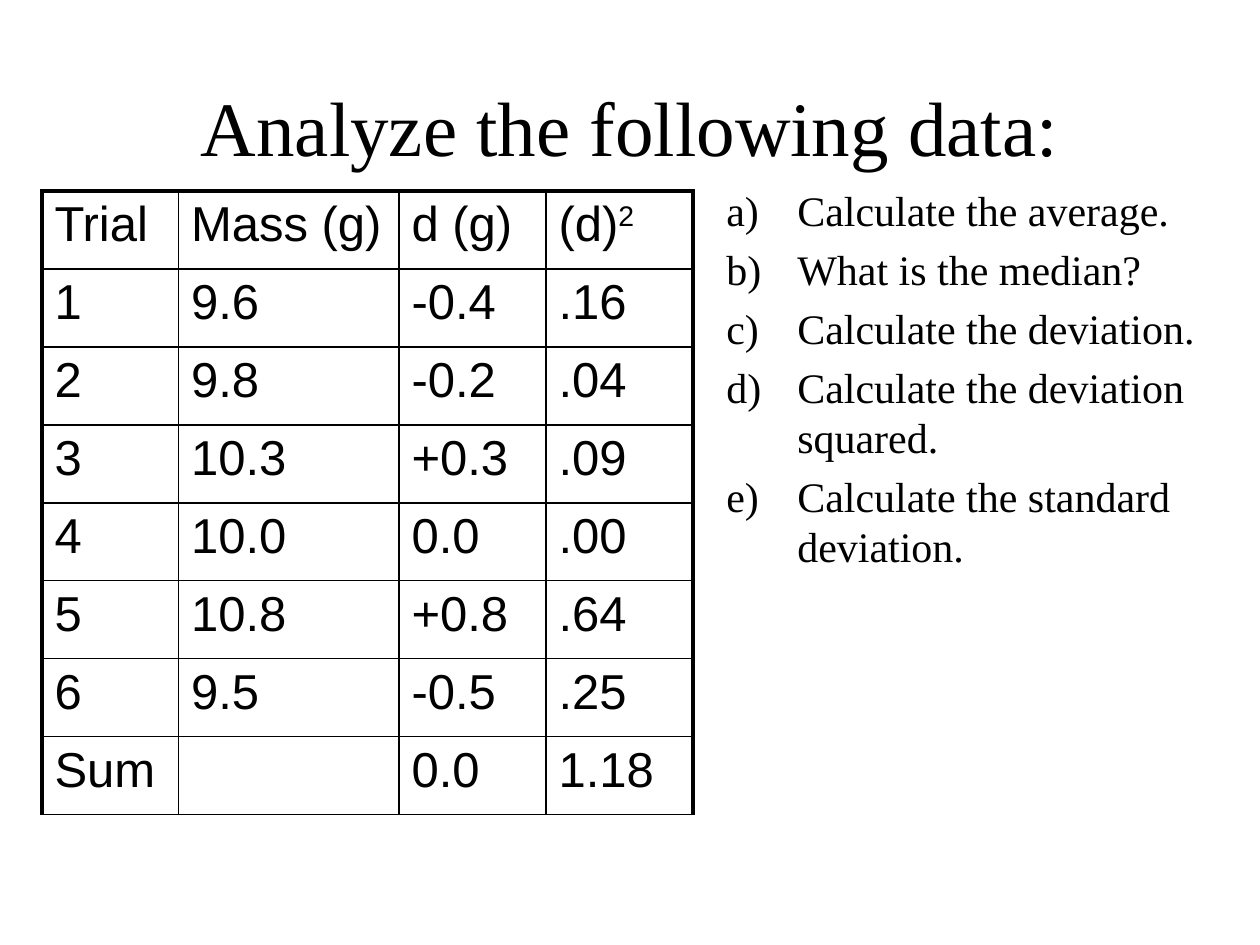
from lxml import etree
from pptx import Presentation
from pptx.dml.color import RGBColor
from pptx.enum.text import MSO_ANCHOR, PP_ALIGN
from pptx.oxml.ns import qn
from pptx.util import Pt

CENTER, LEFT = PP_ALIGN.CENTER, PP_ALIGN.LEFT
MIDDLE, TOP = MSO_ANCHOR.MIDDLE, MSO_ANCHOR.TOP
INK = "000000"
SERIF, SANS = "Times New Roman", "Arial"

# Content; "^" starts a superscript
TITLE = "Analyze the following data:"
ROWS = [
    ("Trial", "Mass (g)", "d (g)", "(d)^2"),
    ("1", "9.6", "-0.4", ".16"),
    ("2", "9.8", "-0.2", ".04"),
    ("3", "10.3", "+0.3", ".09"),
    ("4", "10.0", "0.0", ".00"),
    ("5", "10.8", "+0.8", ".64"),
    ("6", "9.5", "-0.5", ".25"),
    ("Sum", "", "0.0", "1.18"),
]
TASKS = [
    "Calculate the average.",
    "What is the median?",
    "Calculate the deviation.",
    "Calculate the deviation squared.",
    "Calculate the standard deviation.",
]
WIDTHS = (78, 126, 84, 84)
ROW_H = 44.55
THICK, THIN = 2.25, 1


def color(code):
    return RGBColor.from_string(code)


def style(font, size, face):
    font.size, font.name = Pt(size), face
    font.color.rgb = color(INK)


def write(frame, lines, size=24, face=SERIF, align=LEFT, anchor=TOP,
          before=0, hang=0):
    """Fill a text frame; a hang indent also letters the lines a), b), ..."""
    frame.word_wrap = True
    frame.vertical_anchor = anchor
    for i, line in enumerate(lines):
        para = frame.add_paragraph() if i else frame.paragraphs[0]
        para.alignment, para.space_before = align, Pt(before)
        style(para.font, size, face)
        for j, part in enumerate(line.split("^")):
            if part:
                run = para.add_run()
                run.text = part
                style(run.font, size, face)
                if j:
                    run.font._element.set("baseline", "30000")
        if hang:
            props = para._p.get_or_add_pPr()
            props.set("marL", str(Pt(hang)))
            props.set("indent", str(-Pt(hang)))
            mark = etree.Element(qn("a:buAutoNum"), type="alphaLcParenR")
            props.find(qn("a:defRPr")).addprevious(mark)


def border(cell, sides):
    props = cell._tc.get_or_add_tcPr()
    for i, (side, width) in enumerate(sides.items()):
        line = etree.Element(qn("a:ln" + side), w=str(Pt(width)))
        fill = etree.SubElement(line, qn("a:solidFill"))
        etree.SubElement(fill, qn("a:srgbClr"), val=INK)
        props.insert(i, line)


deck = Presentation()
deck.slide_width, deck.slide_height = Pt(720), Pt(540)
slide = deck.slides.add_slide(deck.slide_layouts[6])
shapes = slide.shapes

# Title
box = shapes.add_textbox(Pt(54), Pt(48), Pt(612), Pt(48))
write(box.text_frame, [TITLE], size=44, align=CENTER, anchor=MIDDLE)

# Data table
last = len(WIDTHS) - 1
table = shapes.add_table(len(ROWS), len(WIDTHS), Pt(24), Pt(109.2),
                         Pt(sum(WIDTHS)), Pt(ROW_H * len(ROWS))).table
for col, width in zip(table.columns, WIDTHS):
    col.width = Pt(width)
for r, row in enumerate(ROWS):
    table.rows[r].height = Pt(ROW_H)
    for c, text in enumerate(row):
        cell = table.cell(r, c)
        cell.fill.background()
        write(cell.text_frame, [text], size=28, face=SANS)
        border(cell, {"L": THIN if c else THICK,
                      "R": THICK if c == last else THIN,
                      "T": THIN if r else THICK,
                      "B": THIN})

# Task list
box = shapes.add_textbox(Pt(408), Pt(102), Pt(289.5), Pt(364.5))
write(box.text_frame, TASKS, before=4.8, hang=40.5)

deck.save("out.pptx")
